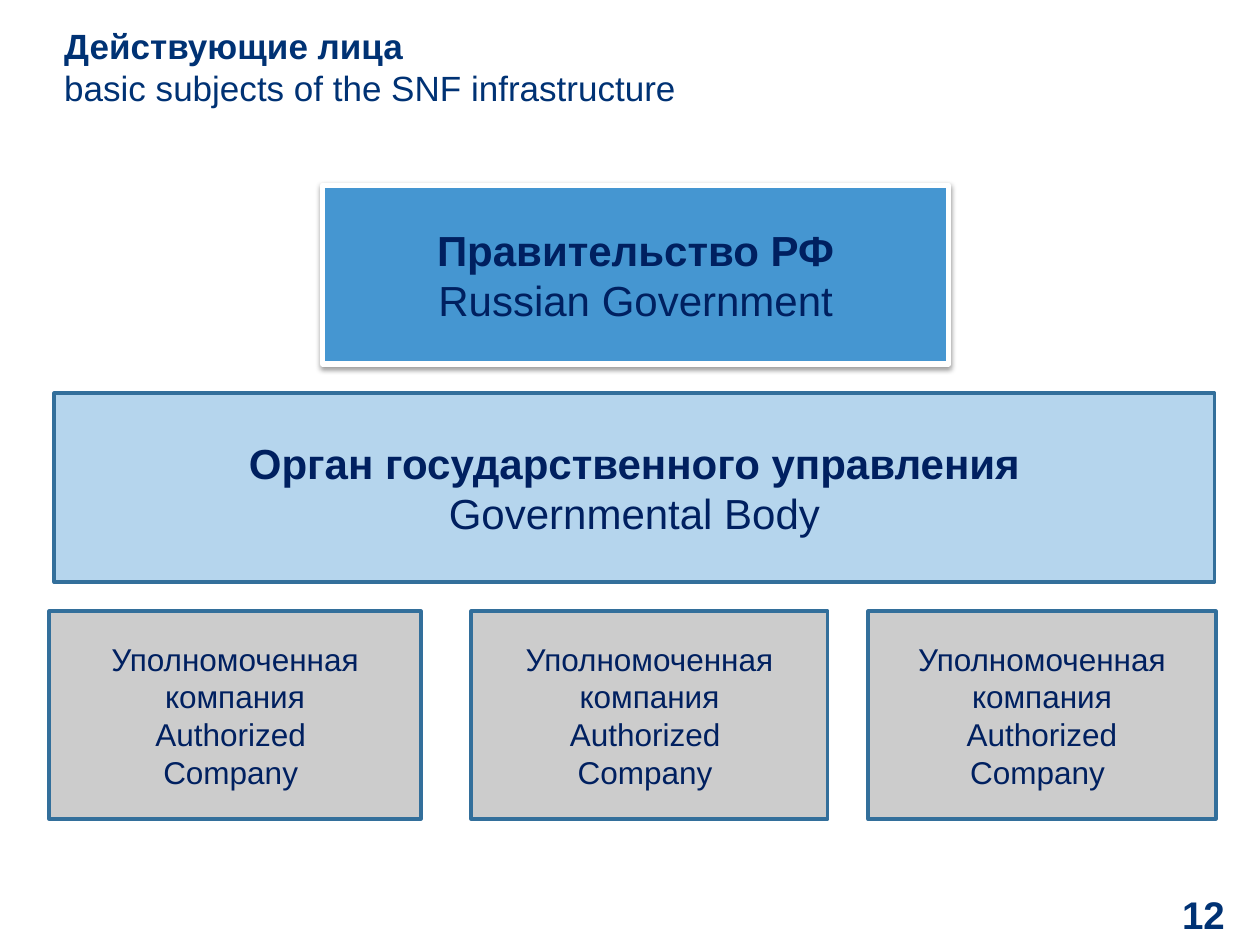
from lxml.etree import SubElement as Sub
from pptx import Presentation as Deck
from pptx.dml.color import RGBColor as RGB
from pptx.enum.shapes import MSO_SHAPE as Kind
from pptx.enum.text import MSO_ANCHOR as Anchor, PP_ALIGN as Align
from pptx.oxml.ns import qn
from pptx.util import Inches, Pt

WIDE, HIGH = Inches(10), Inches(7.5)
NAVY = RGB(0x00, 0x32, 0x74)
INK = RGB(0x00, 0x20, 0x60)
BLUE = RGB(0x45, 0x96, 0xD1)
PALE = RGB(0xB5, 0xD5, 0xED)
GREY = RGB(0xCC, 0xCC, 0xCC)
EDGE = RGB(0x33, 0x6F, 0x9B)
WHITE = RGB(0xFF, 0xFF, 0xFF)


def place(left, top, width, height):
    return [int(size * part / 100) for size, part in
            ((WIDE, left), (HIGH, top), (WIDE, width), (HIGH, height))]


def add_run(para, text, size, color, bold=False):
    run = para.add_run()
    run.text = text
    font = run.font
    font.name, font.size, font.bold = "Arial", Pt(size), bold
    font.color.rgb = color


def add_label(slide, area, align):
    frame = slide.shapes.add_textbox(*place(*area)).text_frame
    frame.word_wrap = True
    frame.vertical_anchor = Anchor.MIDDLE
    frame.margin_left = frame.margin_right = 0
    frame.margin_top = frame.margin_bottom = 0
    para = frame.paragraphs[0]
    para.alignment = align
    return para


def add_box(slide, area, fill, edge, weight, lines, size):
    box = slide.shapes.add_shape(Kind.RECTANGLE, *place(*area))
    box.shadow.inherit = False
    box.fill.solid()
    box.fill.fore_color.rgb = fill
    box.line.color.rgb = edge
    box.line.width = Pt(weight)
    frame = box.text_frame
    frame.word_wrap = True
    frame.vertical_anchor = Anchor.MIDDLE
    for row, (text, bold) in enumerate(lines):
        para = frame.add_paragraph() if row else frame.paragraphs[0]
        para.alignment = Align.CENTER
        add_run(para, text, size, INK, bold)
    return box


def add_shade(box):
    effects = box._element.spPr.find(qn("a:effectLst"))
    shade = Sub(effects, qn("a:outerShdw"), blurRad=str(Pt(3.1)),
                dist=str(Pt(1.6)), dir="5400000", rotWithShape="0")
    color = Sub(shade, qn("a:srgbClr"), val="000000")
    Sub(color, qn("a:alpha"), val="38000")


def main():
    deck = Deck()
    deck.slide_width, deck.slide_height = WIDE, HIGH
    slide = deck.slides.add_slide(deck.slide_layouts[6])

    title = add_label(slide, (5.1, 0, 83.5, 14), Align.LEFT)
    add_run(title, "Действующие лица", 20, NAVY, True)
    title.add_line_break()
    add_run(title, "basic subjects of the SNF infrastructure", 20, NAVY)

    number = add_label(slide, (90.3, 94, 6.9, 5.47), Align.RIGHT)
    add_run(number, "12", 22, NAVY, True)

    state = add_box(slide, (25.6, 19.6, 49.7, 18.93), BLUE, WHITE, 3,
                    [("Правительство РФ", True),
                     ("Russian Government", False)], 24)
    add_shade(state)

    add_box(slide, (4.3, 41.6, 92.1, 20), PALE, EDGE, 2,
            [("Орган государственного управления", True),
             ("Governmental Body", False)], 24)

    firms = ((3.9, 29.5, "Authorized "), (37.4, 28.3, "Authorized "),
             (68.9, 27.6, "Authorized"))
    for left, width, word in firms:
        lines = [(text, False) for text in
                 ("Уполномоченная компания", word, "Company ")]
        add_box(slide, (left, 64.67, width, 22), GREY, EDGE, 2, lines, 18)

    deck.save("out.pptx")


if __name__ == "__main__":
    main()
